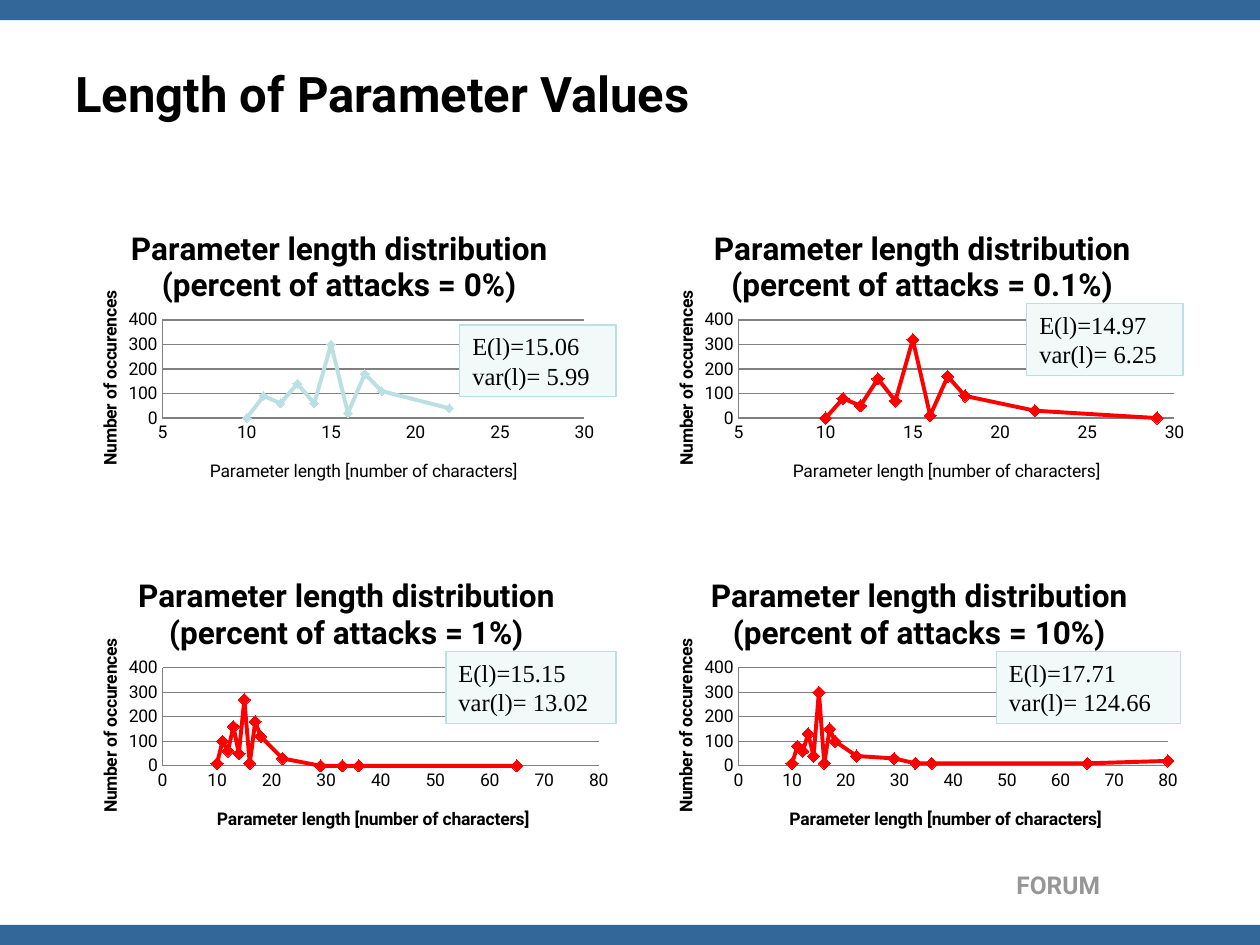
from dataclasses import dataclass
from typing import Any

from lxml.etree import SubElement as Sub
from pptx import Presentation
from pptx.chart.data import XyChartData as XyData
from pptx.dml.color import RGBColor as Rgb
from pptx.enum.chart import XL_CHART_TYPE as Kind
from pptx.enum.chart import XL_MARKER_STYLE as Mark
from pptx.enum.chart import XL_TICK_MARK as Tick
from pptx.enum.shapes import MSO_SHAPE as Form
from pptx.enum.text import MSO_ANCHOR as Anchor
from pptx.enum.text import MSO_AUTO_SIZE as Fit
from pptx.enum.text import PP_ALIGN as Align
from pptx.oxml.ns import qn
from pptx.util import Inches, Pt


@dataclass(frozen=True)
class Theme:
    bar: str = "336699"
    ink: str = "000000"
    foot: str = "969696"
    pale: str = "BBE0E3"
    red: str = "FF0000"
    note: str = "F1F9F9"
    grid: str = "808080"
    sans: str = "Roboto"
    serif: str = "Times New Roman"
    head: int = 28
    sub: int = 18
    body: int = 14
    small: int = 10


@dataclass(frozen=True)
class Panel:
    share: str
    place: tuple[float, float, float]  # left, top, width
    span: tuple[int, int, int]  # least, most, step
    counts: list[int]
    color: str
    mark: int
    bold: bool  # weight of the length axis title
    note: tuple[float, float, float]  # left, top, width
    stats: str


T = Theme()
TALL = 2.36  # chart height
LENGTHS = [*range(10, 19), 22, 29, 33, 36, 65, 80]
LEFT, RIGHT = 0.51, 5.08
UPPER, LOWER = 1.62, 4.38
NEAR, FAR = (5, 30, 5), (0, 80, 10)

PANELS = [
    Panel("0%", (LEFT, UPPER, 4.3), NEAR,
          [0, 90, 60, 140, 60, 300, 20, 180, 110, 40],
          T.pale, 5, False, (3.65, 2.58, 1.24), "E(l)=15.06\nvar(l)= 5.99"),
    Panel("0.1%", (RIGHT, UPPER, 4.41), NEAR,
          [0, 80, 50, 160, 70, 320, 10, 170, 90, 30, 0],
          T.red, 7, False, (8.15, 2.41, 1.24), "E(l)=14.97\nvar(l)= 6.25"),
    Panel("1%", (LEFT, LOWER, 4.41), FAR,
          [10, 100, 60, 160, 50, 270, 10, 180, 120, 30, 0, 0, 0, 0],
          T.red, 7, True, (3.54, 5.17, 1.35), "E(l)=15.15\nvar(l)= 13.02"),
    Panel("10%", (RIGHT, LOWER, 4.36), FAR,
          [10, 80, 60, 130, 40, 300, 10, 150, 100, 40, 30, 10, 10, 10, 20],
          T.red, 7, True, (7.91, 5.17, 1.46), "E(l)=17.71\nvar(l)= 124.66"),
]


def put(item: Any, **values: Any) -> None:
    """Set each named value on the item."""
    for name, value in values.items():
        setattr(item, name, value)


def style(font: Any, size: int, color: str = T.ink, bold: bool = False,
          name: str = T.sans) -> None:
    put(font, size=Pt(size), bold=bold, name=name)
    font.color.rgb = Rgb.from_string(color)


def write(frame: Any, text: str, size: int, **look: Any) -> None:
    frame.text = text
    for para in frame.paragraphs:
        style(para.font, size, **look)
        for run in para.runs:
            style(run.font, size, **look)


def stroke(line: Any, color: str, width: float = 0.75) -> None:
    line.color.rgb = Rgb.from_string(color)
    line.width = Pt(width)


def block(slide: Any, box: tuple[float, ...], fill: str) -> Any:
    shape = slide.shapes.add_shape(Form.RECTANGLE, *map(Inches, box))
    shape.shadow.inherit = False
    shape.fill.solid()
    shape.fill.fore_color.rgb = Rgb.from_string(fill)
    shape.line.fill.background()
    return shape


def label(slide: Any, box: tuple[float, ...], text: str, size: int,
          align: Any, color: str) -> None:
    frame = slide.shapes.add_textbox(*map(Inches, box)).text_frame
    put(frame, word_wrap=True, vertical_anchor=Anchor.MIDDLE)
    write(frame, text, size, color=color, bold=True)
    frame.paragraphs[0].alignment = align


def pin(node: Any, index: int, **parts: Any) -> None:
    """Fix a chart part at given shares of the chart's size."""
    for old in node.findall(qn("c:layout")):
        node.remove(old)
    lay = Sub(node, qn("c:layout"))
    manual = Sub(lay, qn("c:manualLayout"))
    for tag, value in parts.items():
        Sub(manual, qn(f"c:{tag}")).set("val", str(value))
    node.insert(index, lay)


def title(part: Any, text: str, size: int, bold: bool,
          x: float, y: float) -> None:
    write(part.text_frame, text, size, bold=bold)
    pin(part.element if hasattr(part, "element") else part, 1,
        xMode="edge", yMode="edge", x=round(x, 3), y=y)


def plot(slide: Any, panel: Panel) -> None:
    left, top, wide = panel.place
    data = XyData()
    points = data.add_series("Series 1")
    for length, count in zip(LENGTHS, panel.counts):
        points.add_data_point(length, count)
    chart = slide.shapes.add_chart(
        Kind.XY_SCATTER_LINES, *map(Inches, (left, top, wide, TALL)), data
    ).chart
    put(chart, has_legend=False, has_title=True)
    style(chart.font, T.small)

    # Axes
    low, high, step = panel.span
    across, up = chart.category_axis, chart.value_axis
    scales = ((across, low, high, step), (up, 0, 400, 100))
    for axis, least, most, gap in scales:
        put(axis, minimum_scale=least, maximum_scale=most, major_unit=gap,
            major_tick_mark=Tick.NONE, minor_tick_mark=Tick.NONE,
            has_major_gridlines=axis is up, has_title=True)
        stroke(axis.format.line, T.grid)
        style(axis.tick_labels.font, T.small)
    stroke(up.major_gridlines.format.line, T.grid)

    # Titles and plot area
    title(chart.chart_title,
          f"Parameter length distribution\n(percent of attacks = {panel.share})",
          T.sub, True, (wide / 2 - 1.65) / wide, 0.07)
    title(across.axis_title, "Parameter length [number of characters]",
          T.small, panel.bold, (wide / 2 - 1.02) / wide, 0.85)
    title(up.axis_title, "Number of occurences", T.small, True,
          0.25 / wide, 0.28)
    area = chart.element.find(".//" + qn("c:plotArea"))
    pin(area, 0, layoutTarget="inner", xMode="edge", yMode="edge",
        x=round(0.78 / wide, 3), y=0.39, w=round(1 - 0.95 / wide, 3), h=0.33)

    # Line and markers
    series = chart.plots[0].series[0]
    series.smooth = False
    stroke(series.format.line, panel.color, 2.25)
    put(series.marker, style=Mark.DIAMOND, size=panel.mark)
    look = series.marker.format
    look.fill.solid()
    look.fill.fore_color.rgb = Rgb.from_string(panel.color)
    stroke(look.line, panel.color)


def note(slide: Any, panel: Panel) -> None:
    shape = block(slide, (*panel.note, 0.57), T.note)
    stroke(shape.line, T.pale)
    frame = shape.text_frame
    put(frame, word_wrap=False, auto_size=Fit.SHAPE_TO_FIT_TEXT,
        vertical_anchor=Anchor.TOP)
    write(frame, panel.stats, T.body, name=T.serif)
    for para in frame.paragraphs:
        para.alignment = Align.LEFT


def main() -> None:
    deck = Presentation()
    put(deck, slide_width=Inches(10), slide_height=Inches(7.5))
    slide = deck.slides.add_slide(deck.slide_layouts[6])

    # Frame, footer and heading
    for top in (0, 7.34):
        block(slide, (0, top, 10, 0.16), T.bar)
    label(slide, (6.22, 6.86, 2.61, 0.33), "FORUM", T.body, Align.RIGHT, T.foot)
    label(slide, (0.5, 0.3, 9, 0.87), "Length of Parameter Values", T.head,
          Align.LEFT, T.ink)

    # Charts, then the notes above them
    for draw in (plot, note):
        for panel in PANELS:
            draw(slide, panel)
    deck.save("out.pptx")


if __name__ == "__main__":
    main()
